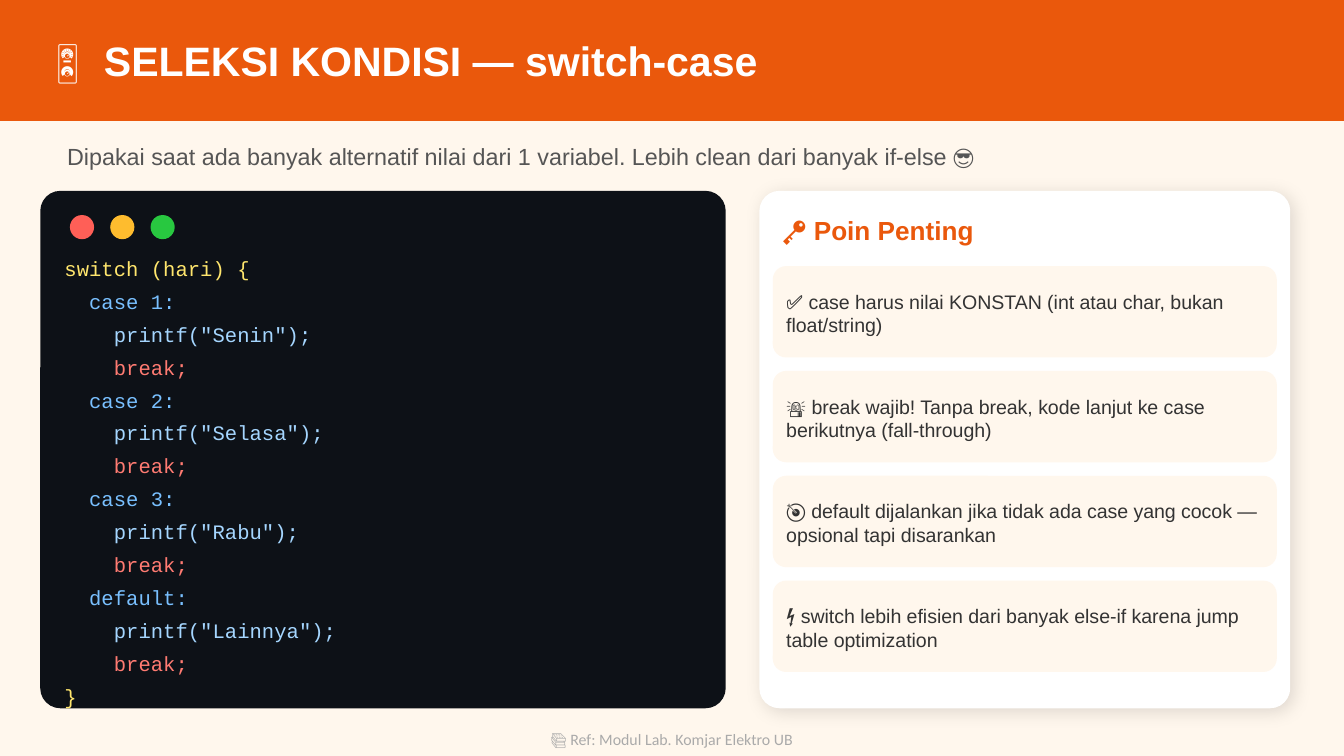
"""Build the slide about switch-case selection in C."""
import lxml.etree
import pptx
import pptx.dml.color
import pptx.enum.shapes
import pptx.enum.text
import pptx.oxml
import pptx.oxml.ns
import pptx.util

Pt = pptx.util.Pt
colour = pptx.dml.color.RGBColor.from_string
MSO_SHAPE = pptx.enum.shapes.MSO_SHAPE
PP_ALIGN = pptx.enum.text.PP_ALIGN


def add_shape(kind, left, top, width, height, fill, radius=None):
    shape = slide.shapes.add_shape(kind, Pt(left), Pt(top), Pt(width), Pt(height))
    shape.shadow.inherit = False
    shape.fill.solid()
    shape.fill.fore_color.rgb = colour(fill)
    shape.line.fill.background()
    if radius is not None:
        shape.adjustments[0] = radius / min(width, height)
    return shape


def write(text, left, top, width, height, size, color, font="Arial", bold=False,
          align=PP_ALIGN.LEFT, tab=None, shape=None):
    if shape is None:
        shape = slide.shapes.add_textbox(0, 0, 0, 0)
    shape.left, shape.top, shape.width, shape.height = Pt(left), Pt(top), Pt(width), Pt(height)
    frame = shape.text_frame
    frame.word_wrap = True
    frame.auto_size = pptx.enum.text.MSO_AUTO_SIZE.NONE
    frame.vertical_anchor = pptx.enum.text.MSO_ANCHOR.MIDDLE
    frame.margin_left = frame.margin_right = frame.margin_top = frame.margin_bottom = 0
    paragraph = frame.paragraphs[0]
    paragraph.alignment = align
    if tab is not None:
        properties = paragraph._p.get_or_add_pPr()
        tabs = lxml.etree.SubElement(properties, pptx.oxml.ns.qn("a:tabLst"))
        lxml.etree.SubElement(tabs, pptx.oxml.ns.qn("a:tab"), pos=str(Pt(tab)), algn="l")
    run = paragraph.add_run()
    run.text = text
    run.font.name = font
    run.font.size = Pt(size)
    run.font.bold = bold
    run.font.color.rgb = colour(color)


presentation = pptx.Presentation()
presentation.slide_width, presentation.slide_height = Pt(720), Pt(405)
slide = presentation.slides.add_slide(presentation.slide_layouts[5])
slide.background.fill.solid()
slide.background.fill.fore_color.rgb = colour("FFF7ED")

banner = add_shape(MSO_SHAPE.RECTANGLE, 0, 0, 720, 64.8, "EA580C")
title = slide.shapes.title
title.element.addprevious(banner.element)
write("🎛️\tSELEKSI KONDISI — switch-case", 28.8, 0, 662.4, 64.8, 22, "FFFFFF",
      bold=True, tab=26.9, shape=title)
write("Dipakai saat ada banyak alternatif nilai dari 1 variabel. "
      "Lebih clean dari banyak if-else 😎", 36, 69.84, 648, 27.36, 12.5, "555555")

add_shape(MSO_SHAPE.ROUNDED_RECTANGLE, 21.6, 102.24, 367.2, 277.2, "0D1117", radius=10.8)
for index, color in enumerate(["FF5F57", "FEBC2E", "28C840"]):
    add_shape(MSO_SHAPE.OVAL, 37.44 + 21.6 * index, 115.2, 12.96, 12.96, color)

brace_color, label_color, call_color, break_color = "FFE66D", "79C0FF", "A5D6FF", "FF7B72"
code_lines = [("switch (hari) {", brace_color)]
for label, word in [("case 1", "Senin"), ("case 2", "Selasa"),
                    ("case 3", "Rabu"), ("default", "Lainnya")]:
    code_lines += [(f"  {label}:", label_color),
                   (f'    printf("{word}");', call_color),
                   ("    break;", break_color)]
code_lines.append(("}", brace_color))
for index, (line, color) in enumerate(code_lines):
    write(line, 34.56, 135 + 17.64 * index, 345.6, 17.28, 11, color, font="Courier New")

panel = add_shape(MSO_SHAPE.ROUNDED_RECTANGLE, 406.8, 102.24, 284.4, 277.2, "FFFFFF", radius=10.8)
effects = panel.element.spPr.find(pptx.oxml.ns.qn("a:effectLst"))
effects.append(pptx.oxml.parse_xml(
    f'<a:outerShdw {pptx.oxml.ns.nsdecls("a")} blurRad="{Pt(10)}" dist="{Pt(3)}" dir="2700000" '
    'algn="bl" rotWithShape="0"><a:srgbClr val="000000"><a:alpha val="12000"/></a:srgbClr>'
    '</a:outerShdw>'))
write("🔑 Poin Penting", 419.04, 109.44, 259.2, 27.36, 14, "EA580C", bold=True)

key_points = [
    "✅ case harus nilai KONSTAN (int atau char, bukan float/string)",
    "🚨 break wajib! Tanpa break, kode lanjut ke case berikutnya (fall-through)",
    "🎯 default dijalankan jika tidak ada case yang cocok — opsional tapi disarankan",
    "⚡ switch lebih efisien dari banyak else-if karena jump table optimization",
]
for index, point in enumerate(key_points):
    top = 142.56 + 56.16 * index
    add_shape(MSO_SHAPE.ROUNDED_RECTANGLE, 414, top, 270, 48.96, "FFF7ED", radius=7.2)
    write(point, 421.2, top + 2.16, 255.6, 46.08, 10.5, "333333")

write("📚 Ref: Modul Lab. Komjar Elektro UB", 0, 387.36, 720, 17.28, 8.5, "AAAAAA",
      font="Calibri", align=PP_ALIGN.CENTER)

presentation.save("out.pptx")
